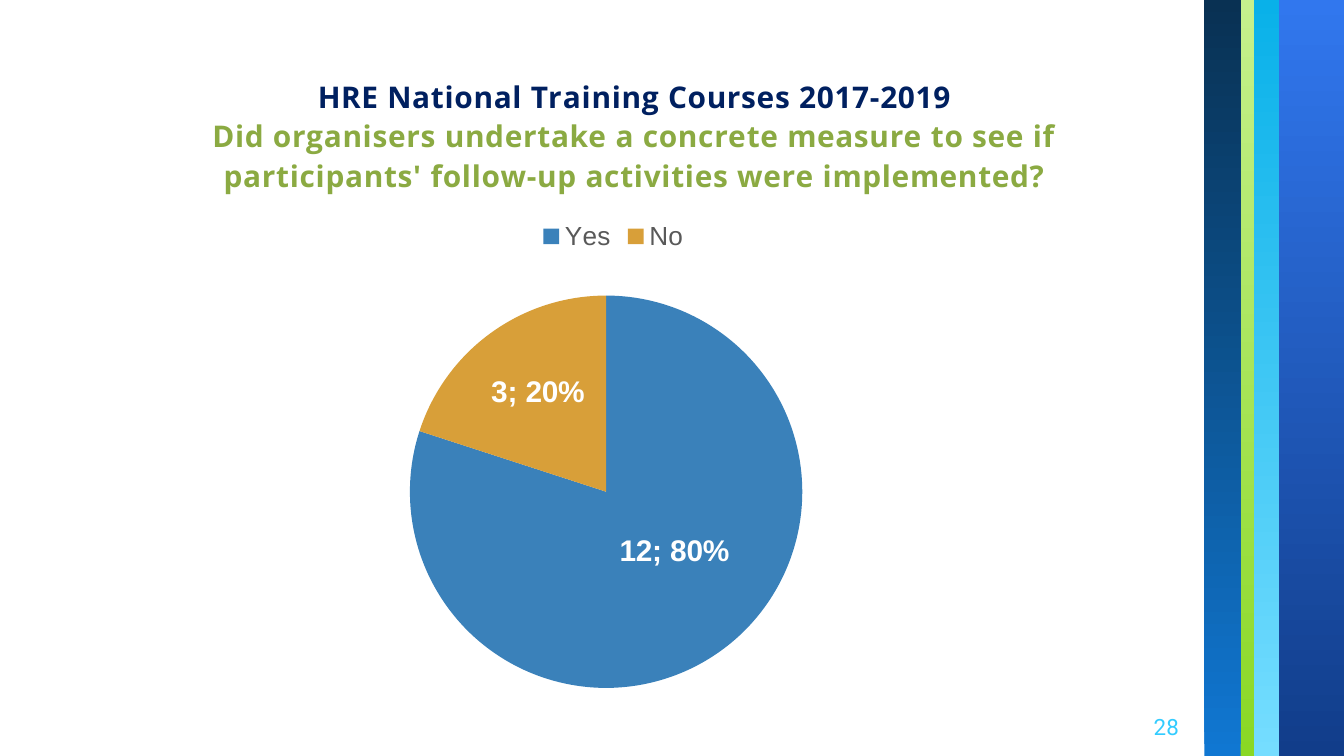
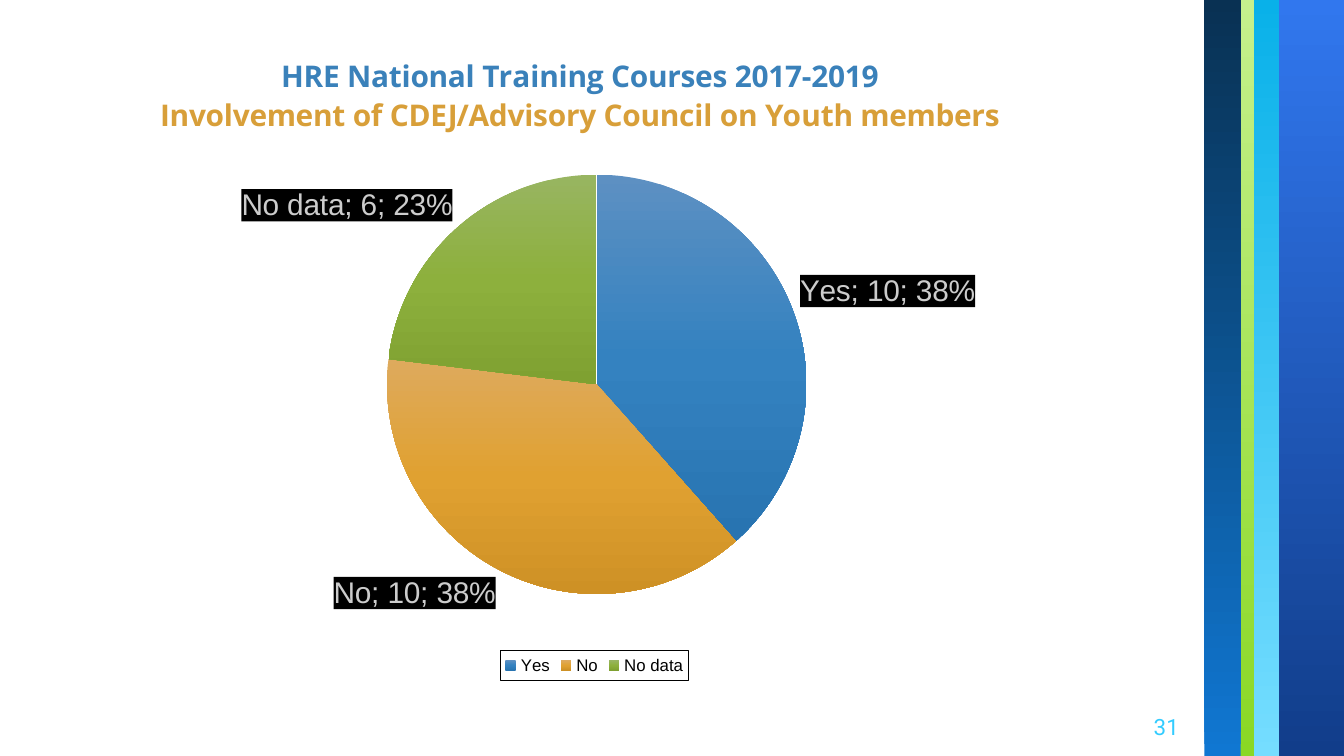
from copy import deepcopy

from lxml.etree import SubElement
from pptx import Presentation
from pptx.chart.data import CategoryChartData
from pptx.dml.color import RGBColor
from pptx.enum.chart import XL_CHART_TYPE, XL_LABEL_POSITION, XL_LEGEND_POSITION
from pptx.enum.shapes import MSO_SHAPE
from pptx.enum.text import MSO_ANCHOR, PP_ALIGN
from pptx.oxml import parse_xml
from pptx.oxml.ns import nsdecls, qn
from pptx.util import Inches, Pt

BLUE, AMBER, NAVY, GREEN = "3A81BA", "D89F39", "002060", "8BAA42"
BLACK, WHITE, CYAN = "000000", "FFFFFF", "33CCFF"
BANDS = [
    (9.51, 0.49, 0, ["3177EE", "113D8A"]),
    (9.32, 0.2, 180, ["75DDFF", "09B1E9"]),
    (9.23, 0.1, 0, ["C6F18D", "8AD824"]),
    (8.96, 0.27, 180, ["1077D2", "093153"]),
]
WIDTH = 10
HEIGHT = WIDTH * 9 / 16


def rgb(value):
    return RGBColor.from_string(value)


def apply(obj, values):
    for name, value in values.items():
        setattr(obj, name, value)


def set_font(font, color, size, name="Arial", bold=False):
    apply(font, {"name": name, "size": Pt(size), "bold": bold})
    font.color.rgb = rgb(color)


def set_fill(fill, colors):
    if len(colors) == 1:
        fill.solid()
        fill.fore_color.rgb = rgb(colors[0])
        return
    fill.gradient()
    fill.gradient_angle = 270
    stops = fill._xPr.find(qn("a:gradFill")).find(qn("a:gsLst"))
    while len(stops) < len(colors):
        stops.append(deepcopy(stops[0]))
    for i, (stop, color) in enumerate(zip(fill.gradient_stops, colors)):
        stop.color.rgb = rgb(color)
        stop.position = i / (len(colors) - 1)


def add_bands(layout, s):
    for i, (left, width, rotation, colors) in enumerate(BANDS):
        sp = s.shapes.add_shape(
            MSO_SHAPE.RECTANGLE, Inches(left), 0, Inches(width), Inches(HEIGHT))
        sp.rotation = rotation
        sp.shadow.inherit = False
        sp.line.fill.background()
        set_fill(sp.fill, colors)
        layout.shapes.element.insert(2 + i, sp.element)


def add_page_number(s, number):
    tf = s.shapes.add_textbox(
        Inches(8.27), Inches(5.19), Inches(0.6), Inches(0.43)).text_frame
    apply(tf, {"word_wrap": True, "vertical_anchor": MSO_ANCHOR.MIDDLE})
    apply(tf, dict.fromkeys(
        ("margin_left", "margin_top", "margin_right", "margin_bottom"), Inches(0.1)))
    p = tf.paragraphs[0]
    p.alignment = PP_ALIGN.RIGHT
    r = p.add_run()
    r.text = str(number)
    set_font(r.font, CYAN, 12, "Roboto")


def layout_element(values):
    layout = parse_xml(f"<c:layout {nsdecls('c')}><c:manualLayout/></c:layout>")
    for name, value in values.items():
        SubElement(layout[0], qn(f"c:{name}")).set("val", str(value))
    return layout


def place(frame, left, top, size=None):
    x, y, width, height = frame
    values = {"layoutTarget": "inner"} if size else {}
    values.update(xMode="edge", yMode="edge", x=(left - x) / width, y=(top - y) / height)
    if size:
        values.update(w=size / width, h=size / height)
    return layout_element(values)


def drop_layout(element):
    for old in element.findall(qn("c:layout")):
        element.remove(old)


def add_box_format(parent, kind):
    color = f'<a:solidFill><a:srgbClr val="{BLACK}"/></a:solidFill>'
    body = color if kind == "fill" else f'<a:ln w="3175">{color}</a:ln>'
    parent.find(qn("c:txPr")).addprevious(
        parse_xml(f"<c:spPr {nsdecls('c', 'a')}>{body}</c:spPr>"))


def add_separator(element):
    element.find(qn("c:showBubbleSize")).addnext(
        parse_xml(f"<c:separator {nsdecls('c')}>; </c:separator>"))


def add_pie(s, frame, pie, values, fills):
    data = CategoryChartData()
    data.categories = list(values)
    data.add_series("Series 1", list(values.values()))
    chart = s.shapes.add_chart(
        XL_CHART_TYPE.PIE, *map(Inches, frame), data).chart
    set_font(chart.font, BLACK, 10)
    plot = chart.plots[0]
    plot.vary_by_categories = True
    for i, colors in enumerate(fills):
        fmt = plot.series[0].points[i].format
        set_fill(fmt.fill, colors)
        fmt.line.fill.background()
    area = chart._chartSpace.chart.plotArea
    drop_layout(area)
    area.insert(0, place(frame, *pie))
    return chart


def add_title(chart, frame, at, lines, spacing=0):
    title = chart.chart_title
    tf = title.text_frame
    for i, (text, color) in enumerate(lines):
        p = tf.add_paragraph() if i else tf.paragraphs[0]
        p.alignment = PP_ALIGN.CENTER
        r = p.add_run()
        r.text = text
        set_font(r.font, color, 16, "Open Sans", True)
        r.font._element.set("spc", str(spacing))
    element = title._element
    drop_layout(element)
    element.find(qn("c:tx")).addnext(place(frame, *at))


def add_legend(chart, frame, position, at, color, size, border=False):
    chart.has_legend = True
    legend = chart.legend
    apply(legend, {"position": position, "include_in_layout": False})
    set_font(legend.font, color, size)
    element = legend._element
    element.find(qn("c:legendPos")).addnext(place(frame, *at))
    if border:
        add_box_format(element, "line")


def add_labels(chart, color, position, bold=False, category=False, filled=False):
    labels = chart.plots[0].series[0].data_labels
    apply(labels, {"show_value": True, "show_percentage": True,
                   "show_category_name": category, "position": position})
    set_font(labels.font, color, 16, bold=bold)
    add_separator(labels._element)
    if filled:
        add_box_format(labels._element, "fill")


def shift_labels(chart, offsets):
    for i, (x, y) in enumerate(offsets):
        label = chart.plots[0].series[0].points[i].data_label
        set_font(label.font, WHITE, 16, bold=True)
        label.position = XL_LABEL_POSITION.CENTER
        element = label._dLbl
        element.find(qn("c:showPercent")).set("val", "1")
        element.find(qn("c:idx")).addnext(layout_element({"x": x, "y": y}))
        add_separator(element)


def add_follow_up(s):
    frame = (0.6, 0.41, 7.94, 4.99)
    chart = add_pie(s, frame, (3.05, 2.2, 2.92), {"Yes": 12, "No": 3},
                    [[BLUE], [AMBER]])
    add_title(chart, frame, (1.55, 0.53), [
        ("HRE National Training Courses 2017-2019", NAVY),
        ("Did organisers undertake a concrete measure to see if "
         "participants' follow-up activities were implemented?", GREEN),
    ], spacing=50)
    add_legend(chart, frame, XL_LEGEND_POSITION.TOP, (3.98, 1.61), "595959", 14)
    add_labels(chart, WHITE, XL_LABEL_POSITION.INSIDE_END, bold=True)
    shift_labels(chart, [(0.01, -0.03), (-0.01, -0.03)])
    add_page_number(s, 28)


def add_involvement(s):
    frame = (0.24, 0.24, 8.36, 4.83)
    chart = add_pie(s, frame, (2.88, 1.3, 3.12), {"Yes": 10, "No": 10, "No data": 6}, [
        ["5D90C2", "3482C0", "2874B1"],
        ["DEAA5D", "E0A131", "CE9125"],
        ["98B561", "8DB03D", "7FA131"],
    ])
    add_title(chart, frame, (1.16, 0.37), [
        ("HRE National Training Courses 2017-2019", BLUE),
        ("Involvement of CDEJ/Advisory Council on Youth members", AMBER),
    ])
    add_legend(chart, frame, XL_LEGEND_POSITION.BOTTOM, (3.72, 4.84), BLACK, 9, border=True)
    add_labels(chart, "CCCCCC", XL_LABEL_POSITION.OUTSIDE_END, category=True, filled=True)
    add_page_number(s, 31)


def main():
    prs = Presentation()
    apply(prs, {"slide_width": Inches(WIDTH), "slide_height": Inches(HEIGHT)})
    layout = prs.slide_layouts[6]
    slides = [prs.slides.add_slide(layout) for _ in range(2)]
    add_bands(layout, slides[0])
    add_follow_up(slides[0])
    add_involvement(slides[1])
    prs.save("out.pptx")


if __name__ == "__main__":
    main()
